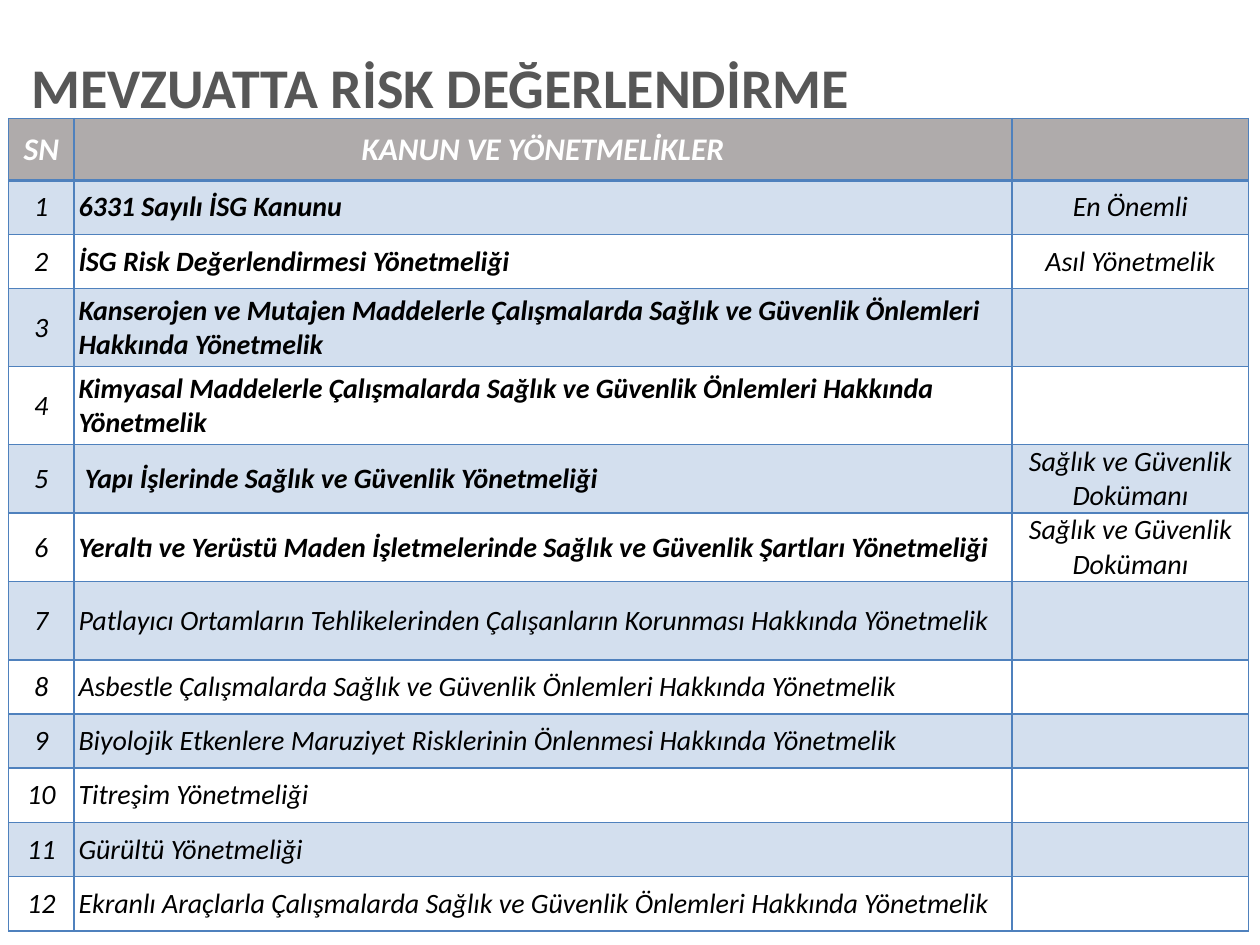
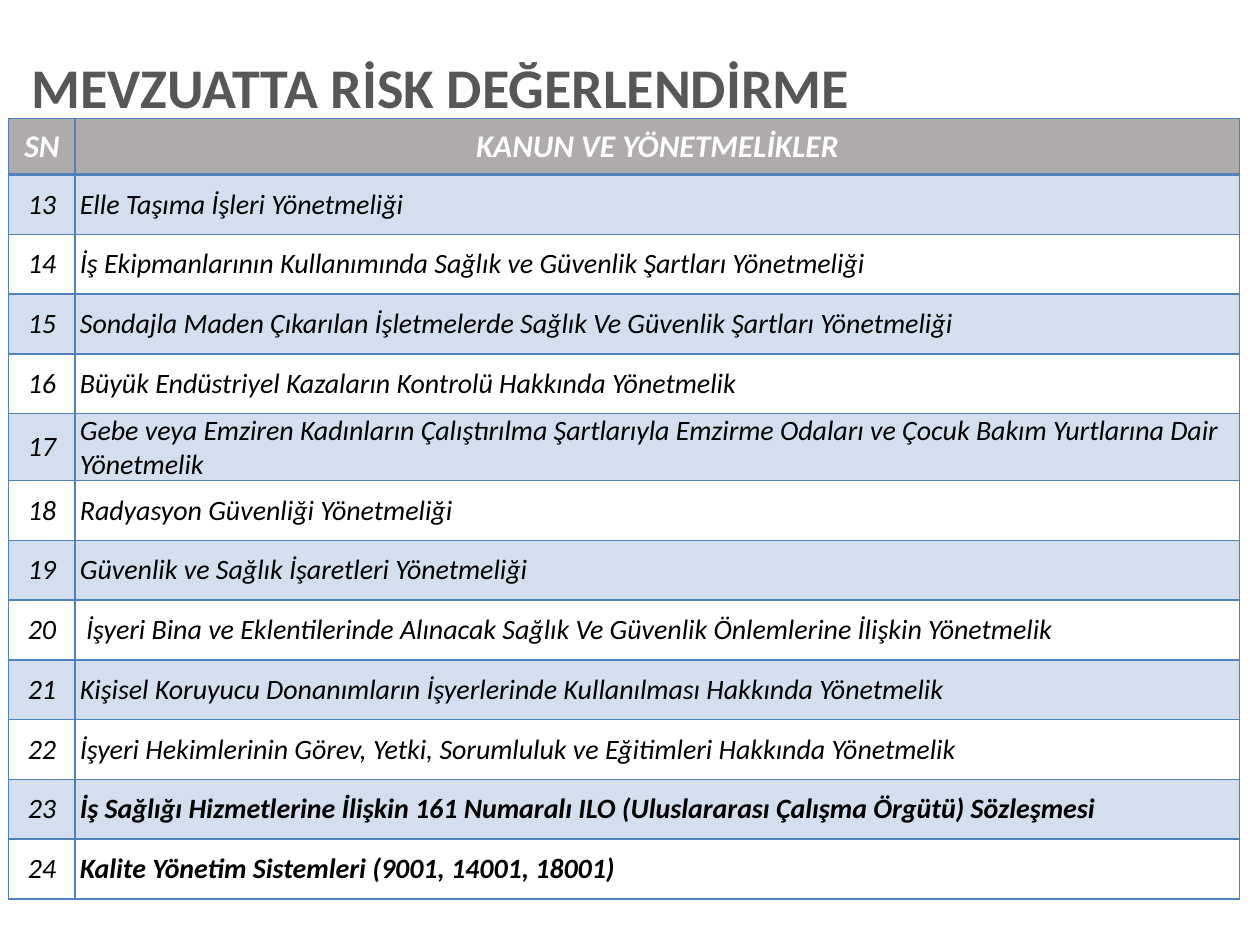
import pptx
import pptx.util
import pptx.dml.color
import pptx.enum.text
import pptx.oxml
import pptx.oxml.ns

Pt = pptx.util.Pt
ALIGN = pptx.enum.text.PP_ALIGN
MIDDLE = pptx.enum.text.MSO_ANCHOR.MIDDLE

TITLE = "MEVZUATTA RİSK DEĞERLENDİRME"
HEADINGS = ["SN", "KANUN VE YÖNETMELİKLER", ""]
SAFETY_FILE = "Sağlık ve Güvenlik Dokümanı"

# Each slide lists its regulations; "bold" and "notes" are keyed by serial number.
SLIDES = [
    {
        "first": 1,
        "columns": [37.2, 536.2, 135.2],
        "header": 35.2, "row": 31, "tall_row": 44.6, "tall": {3, 4, 7},
        "height": 461.6,
        "bold": {1, 2, 3, 4, 5, 6},
        "notes": {1: "En Önemli", 2: "Asıl Yönetmelik", 5: SAFETY_FILE, 6: SAFETY_FILE},
        "regulations": [
            "6331 Sayılı İSG Kanunu",
            "İSG Risk Değerlendirmesi Yönetmeliği",
            "Kanserojen ve Mutajen Maddelerle Çalışmalarda Sağlık ve Güvenlik Önlemleri Hakkında Yönetmelik",
            "Kimyasal Maddelerle Çalışmalarda Sağlık ve Güvenlik Önlemleri Hakkında Yönetmelik",
            " Yapı İşlerinde Sağlık ve Güvenlik Yönetmeliği",
            "Yeraltı ve Yerüstü Maden İşletmelerinde Sağlık ve Güvenlik Şartları Yönetmeliği",
            "Patlayıcı Ortamların Tehlikelerinden Çalışanların Korunması Hakkında Yönetmelik",
            "Asbestle Çalışmalarda Sağlık ve Güvenlik Önlemleri Hakkında Yönetmelik",
            "Biyolojik Etkenlere Maruziyet Risklerinin Önlenmesi Hakkında Yönetmelik",
            "Titreşim Yönetmeliği",
            "Gürültü Yönetmeliği",
            "Ekranlı Araçlarla Çalışmalarda Sağlık ve Güvenlik Önlemleri Hakkında Yönetmelik",
        ],
    },
    {
        "first": 13,
        "columns": [38, 665.4],
        "header": 32, "row": 34.15, "tall_row": 34.15, "tall": set(),
        "height": 446.4,
        "bold": {23, 24},
        "notes": {},
        "regulations": [
            "Elle Taşıma İşleri Yönetmeliği",
            "İş Ekipmanlarının Kullanımında Sağlık ve Güvenlik Şartları Yönetmeliği",
            "Sondajla Maden Çıkarılan İşletmelerde Sağlık Ve Güvenlik Şartları Yönetmeliği",
            "Büyük Endüstriyel Kazaların Kontrolü Hakkında Yönetmelik",
            "Gebe veya Emziren Kadınların Çalıştırılma Şartlarıyla Emzirme Odaları ve Çocuk Bakım Yurtlarına Dair Yönetmelik",
            "Radyasyon Güvenliği Yönetmeliği",
            "Güvenlik ve Sağlık İşaretleri Yönetmeliği",
            " İşyeri Bina ve Eklentilerinde Alınacak Sağlık Ve Güvenlik Önlemlerine İlişkin Yönetmelik",
            "Kişisel Koruyucu Donanımların İşyerlerinde Kullanılması Hakkında Yönetmelik",
            "İşyeri Hekimlerinin Görev, Yetki, Sorumluluk ve Eğitimleri Hakkında Yönetmelik",
            "İş Sağlığı Hizmetlerine İlişkin 161 Numaralı ILO (Uluslararası Çalışma Örgütü) Sözleşmesi",
            "Kalite Yönetim Sistemleri (9001, 14001, 18001)",
        ],
    },
]

FONT = "Calibri"
TITLE_GREY, HEADER_GREY, BAND_BLUE, BORDER_BLUE = "575757", "AFABAB", "D3DFEE", "4F81BD"
WHITE, BLACK = "FFFFFF", "000000"
TABLE_LEFT, TABLE_TOP = 5, 67.8
THIN, THICK = 1, 2.25


def color(value):
    return pptx.dml.color.RGBColor.from_string(value)


def write(frame, text, size=16, ink=BLACK, bold=False, italic=False,
          align=ALIGN.LEFT, spacing=None):
    para = frame.paragraphs[0]
    para.alignment = align
    if spacing:
        para.line_spacing = spacing
    if text:
        span = para.add_run()
        span.text = text
        font = span.font
    else:
        font = para.font
    font.name, font.size = FONT, Pt(size)
    font.bold, font.italic = bold, italic
    font.color.rgb = color(ink)


def add_borders(cell, top, bottom):
    properties = cell._tc.get_or_add_tcPr()
    for side, width in (("L", THIN), ("R", THIN), ("T", top), ("B", bottom)):
        properties.append(pptx.oxml.parse_xml(
            f'<a:ln{side} {pptx.oxml.ns.nsdecls("a")} w="{int(Pt(width))}">'
            f'<a:solidFill><a:srgbClr val="{BORDER_BLUE}"/></a:solidFill></a:ln{side}>'))


def fill_cell(cell, row, column, text, bold):
    side = 5 if column == 0 else 2.7
    cell.margin_left = cell.margin_right = Pt(side)
    cell.margin_top = cell.margin_bottom = 0
    cell.vertical_anchor = MIDDLE
    add_borders(cell, THICK if row == 1 else THIN, THICK if row == 0 else THIN)
    if row % 2 or row == 0:
        cell.fill.solid()
        cell.fill.fore_color.rgb = color(BAND_BLUE if row else HEADER_GREY)
    else:
        cell.fill.background()
    if row == 0:
        write(cell.text_frame, text, size=18, ink=WHITE, bold=True, italic=True,
              align=ALIGN.CENTER)
    else:
        write(cell.text_frame, text, bold=bold and column == 1, italic=True,
              align=ALIGN.LEFT if column == 1 else ALIGN.CENTER)


def add_regulations(page, content):
    columns = content["columns"]
    numbered = list(enumerate(content["regulations"], content["first"]))
    frame = page.shapes.add_table(
        len(numbered) + 1, len(columns), Pt(TABLE_LEFT), Pt(TABLE_TOP),
        Pt(sum(columns)), Pt(content["height"]))
    table = frame.table
    table.horz_banding = False
    for column, width in zip(table.columns, columns):
        column.width = Pt(width)

    lines = [(None, HEADINGS)]
    lines += [(number, [str(number), name, content["notes"].get(number, "")])
              for number, name in numbered]
    for row, (number, texts) in enumerate(lines):
        height = "header" if row == 0 else "tall_row" if number in content["tall"] else "row"
        table.rows[row].height = Pt(content[height])
        for column in range(len(columns)):
            fill_cell(table.cell(row, column), row, column, texts[column],
                      number in content["bold"])
    frame.height = Pt(content["height"])


def add_title(page):
    box = page.shapes.add_textbox(Pt(18), Pt(26), Pt(694), Pt(51))
    frame = box.text_frame
    frame.word_wrap = True
    frame.vertical_anchor = MIDDLE
    frame.margin_left = frame.margin_right = 0
    write(frame, TITLE, size=32, ink=TITLE_GREY, bold=True, spacing=0.9)


def main():
    deck = pptx.Presentation()
    deck.slide_width, deck.slide_height = Pt(720), Pt(540)
    for content in SLIDES:
        page = deck.slides.add_slide(deck.slide_layouts[6])
        add_regulations(page, content)
        add_title(page)
    deck.save("out.pptx")


if __name__ == "__main__":
    main()
